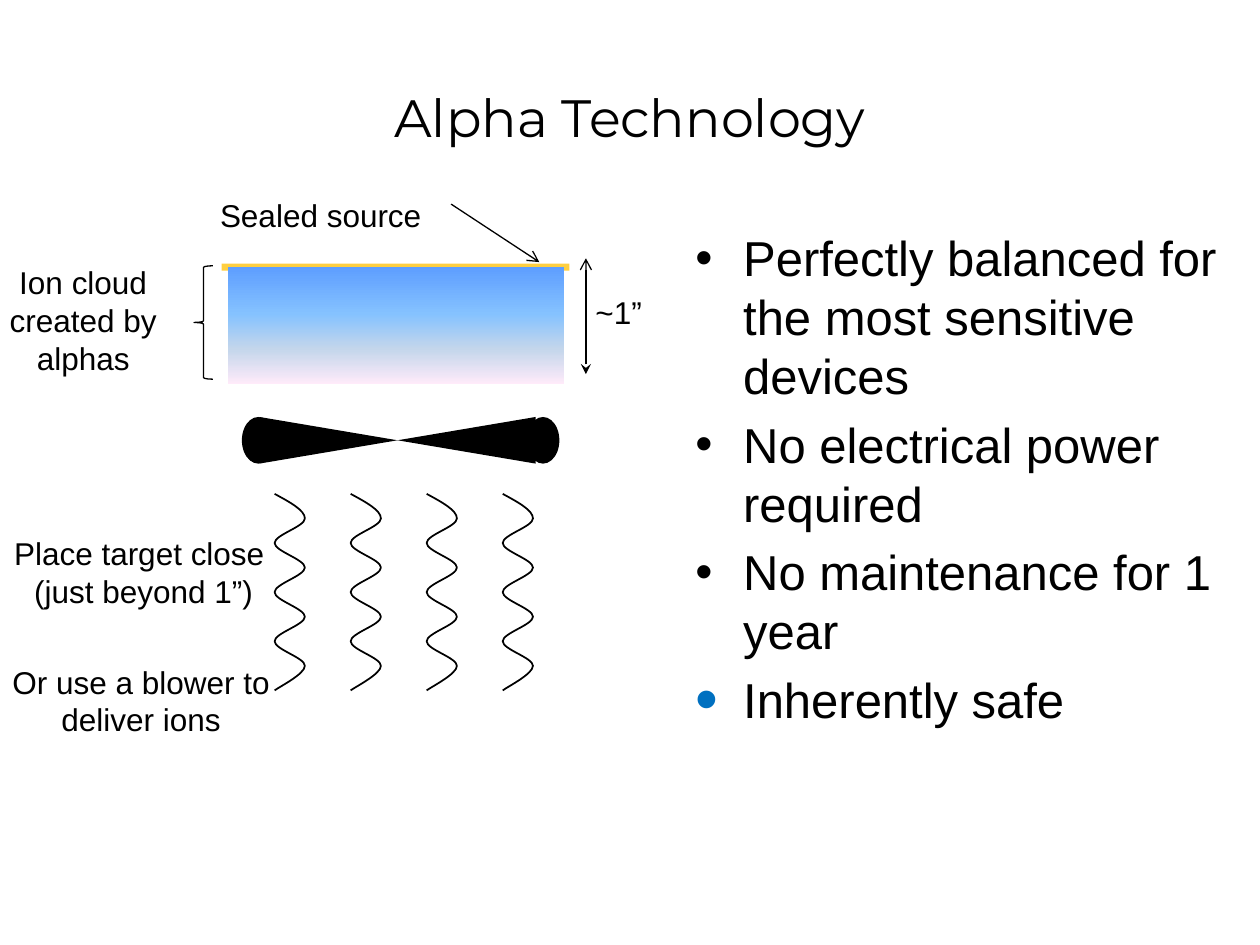
import pptx
import pptx.dml.color
import pptx.enum.shapes
import pptx.enum.text
import pptx.oxml
import pptx.oxml.ns
import pptx.util
from lxml import etree
from pptx.util import Inches

COLORS = {
    "ink": "000000",
    "foil": "FFC000",
    "bullet": "0070C0",
}
CLOUD_STOPS = [(0, "5E9EFF"), (40, "85C2FF"), (70, "C4D6EB"), (100, "FFEBFA")]
SHAPES = pptx.enum.shapes.MSO_SHAPE
ALIGN = pptx.enum.text.PP_ALIGN
ANCHOR = pptx.enum.text.MSO_ANCHOR
qn = pptx.oxml.ns.qn


def rgb(name):
    return pptx.dml.color.RGBColor.from_string(COLORS[name])


def add_text(slide, box, lines, size, font="Arial", align=ALIGN.CENTER, wrap=True, grow=True):
    frame = slide.shapes.add_textbox(*map(Inches, box)).text_frame
    frame.word_wrap = wrap
    if grow:
        frame.auto_size = pptx.enum.text.MSO_AUTO_SIZE.SHAPE_TO_FIT_TEXT
    for index, line in enumerate(lines):
        paragraph = frame.paragraphs[0] if index == 0 else frame.add_paragraph()
        paragraph.alignment = align
        run = paragraph.add_run()
        run.text = line
        run.font.name = font
        run.font.size = pptx.util.Pt(size)
        run.font.color.rgb = rgb("ink")
    return frame


def add_line(slide, start, end, color="ink", width=0.75, **arrowheads):
    line = slide.shapes.add_connector(
        pptx.enum.shapes.MSO_CONNECTOR.STRAIGHT, *map(Inches, start + end))
    line.line.color.rgb = rgb(color)
    line.line.width = pptx.util.Pt(width)
    outline = line.line._get_or_add_ln()
    for side in ("headEnd", "tailEnd"):
        if side in arrowheads:
            etree.SubElement(outline, qn("a:" + side), type=arrowheads[side])
    etree.SubElement(line._element.spPr, qn("a:effectLst"))
    return line


def add_solid(slide, shape_type, box):
    shape = slide.shapes.add_shape(shape_type, *map(Inches, box))
    shape.shadow.inherit = False
    shape.fill.solid()
    shape.fill.fore_color.rgb = rgb("ink")
    shape.line.fill.background()
    return shape


def add_outline(slide, points, closed):
    corners = [tuple(map(Inches, point)) for point in points]
    builder = slide.shapes.build_freeform(*corners[0])
    builder.add_line_segments(corners[1:], close=closed)
    shape = builder.convert_to_shape()
    shape.shadow.inherit = False
    return shape


def add_title(slide, box):
    frame = add_text(slide, box, ["Alpha Technology"], 30, "Montserrat", grow=False)
    frame.vertical_anchor = ANCHOR.MIDDLE


def add_benefits(slide, box):
    benefits = [
        "Perfectly balanced for the most sensitive devices",
        "No electrical power required",
        "No maintenance for 1 year",
        "Inherently safe",
    ]
    frame = add_text(slide, box, benefits, 28, align=ALIGN.LEFT, grow=False)
    for index, paragraph in enumerate(frame.paragraphs):
        if index:
            paragraph.space_before = pptx.util.Pt(5.6)
        props = paragraph._p.get_or_add_pPr()
        props.set("marL", str(Inches(0.38)))
        props.set("indent", str(Inches(-0.38)))
        if index == len(benefits) - 1:
            color = etree.SubElement(props, qn("a:buClr"))
            etree.SubElement(color, qn("a:srgbClr"), val=COLORS["bullet"])
            etree.SubElement(props, qn("a:buSzPct"), val="133000")
        etree.SubElement(props, qn("a:buFont"), typeface="Arial")
        etree.SubElement(props, qn("a:buChar"), char="•")


def add_ion_cloud(slide, box):
    left, top, width, height = box
    foil = add_line(slide, (left - 0.05, top), (left + width + 0.04, top), "foil", 4)
    foil_color = foil.line._get_or_add_ln().find(".//" + qn("a:srgbClr"))
    etree.SubElement(foil_color, qn("a:alpha"), val="75000")

    cloud = add_solid(slide, SHAPES.RECTANGLE, box)
    cloud.fill.gradient()
    cloud.fill.gradient_angle = 270
    stops = cloud._element.spPr.find(".//" + qn("a:gsLst"))
    for stop in list(stops):
        stops.remove(stop)
    for position, color in CLOUD_STOPS:
        stop = etree.SubElement(stops, qn("a:gs"), pos=str(position * 1000))
        etree.SubElement(stop, qn("a:srgbClr"), val=color)


def add_fan(slide, box):
    left, top, width, height = box
    hub = 0.26
    right, bottom = left + width, top + height
    for tip in (right - hub, left):
        add_solid(slide, SHAPES.OVAL, (tip, top, hub, height))
    inner_left, inner_right = left + 0.14, right - 0.19
    blades = add_outline(slide, [(inner_left, top), (inner_right, bottom),
                                 (inner_right, top), (inner_left, bottom)], True)
    blades.fill.solid()
    blades.fill.fore_color.rgb = rgb("ink")
    blades.line.fill.background()


def add_wave(slide, box):
    left, top, width, height = box
    right, step = left + width, height / 8
    points = [(left, top)]
    for turn in range(8):
        start, end = (left, right) if turn % 2 == 0 else (right, left)
        y = top + turn * step
        first = (start + (end - start) / 2, y + step / 3) if turn == 0 else (start, y + step / 3)
        last = (end, y + step * 2 / 3)
        if turn == 7:
            last = (left + 0.04, top + height - 0.03)
        points += [first, last, (end, y + step)]
    wave = add_outline(slide, points, False)
    wave.fill.background()
    wave.line.color.rgb = rgb("ink")
    wave.line.width = pptx.util.Pt(1)
    path = wave._element.spPr.find(".//" + qn("a:path"))
    segments = path.findall(qn("a:lnTo"))
    for index in range(0, len(segments), 3):
        curve = etree.SubElement(path, qn("a:cubicBezTo"))
        for segment in segments[index:index + 3]:
            curve.append(segment[0])
            path.remove(segment)


def add_airflow(slide, box):
    left, top, width, height = box
    wave_width, count = 0.24, 4
    pitch = (width - wave_width) / (count - 1)
    for index in range(count):
        add_wave(slide, (left + index * pitch, top, wave_width, height))


def add_callouts(slide, box):
    left, top, width, height = box
    add_text(slide, (left - 0.17, top - 0.61, 1.81, 0.4), ["Sealed source"], 18, wrap=False)
    add_line(slide, (left + 1.77, top - 0.5), (left + 2.47, top - 0.04), tailEnd="arrow")

    depth_x = left + width + 0.17
    add_line(slide, (depth_x, top + 0.85), (depth_x, top - 0.07),
             headEnd="stealth", tailEnd="arrow")
    add_text(slide, (depth_x - 0.03, top + 0.16, 0.58, 0.4), ["~1”"], 18, wrap=False)

    brace = add_solid(slide, SHAPES.LEFT_BRACE, (left - 0.27, top - 0.01, 0.15, 0.9))
    brace.adjustments[0] = 0.083
    brace.fill.background()
    brace.line.color.rgb = rgb("ink")
    brace.line.width = pptx.util.Pt(0.75)
    add_text(slide, (left - 1.92, top - 0.08, 1.54, 1.01), ["Ion cloud created by alphas"], 18)


def add_placement_notes(slide, box):
    left, top, width, height = box
    add_text(slide, (left + 0.3, top, 2.21, 0.71),
             ["Place target close", " (just beyond 1”)"], 18, wrap=False)
    add_text(slide, (left, top + height - 0.71, width, 0.71),
             ["Or use a blower to deliver ions"], 18)


def main():
    deck = pptx.Presentation()
    deck.slide_width, deck.slide_height = Inches(10), Inches(7.5)
    slide = deck.slides.add_slide(deck.slide_layouts[6])
    cloud_box = (1.81, 2.12, 2.67, 0.93)
    add_title(slide, (0.5, 0.3, 9, 1.25))
    add_benefits(slide, (5.42, 1.76, 4.42, 4.95))
    add_ion_cloud(slide, cloud_box)
    add_fan(slide, (1.92, 3.31, 2.52, 0.37))
    add_airflow(slide, (2.18, 3.92, 2.05, 1.56))
    add_callouts(slide, cloud_box)
    add_placement_notes(slide, (-0.3, 4.19, 2.84, 1.73))
    deck.save("out.pptx")


if __name__ == "__main__":
    main()
